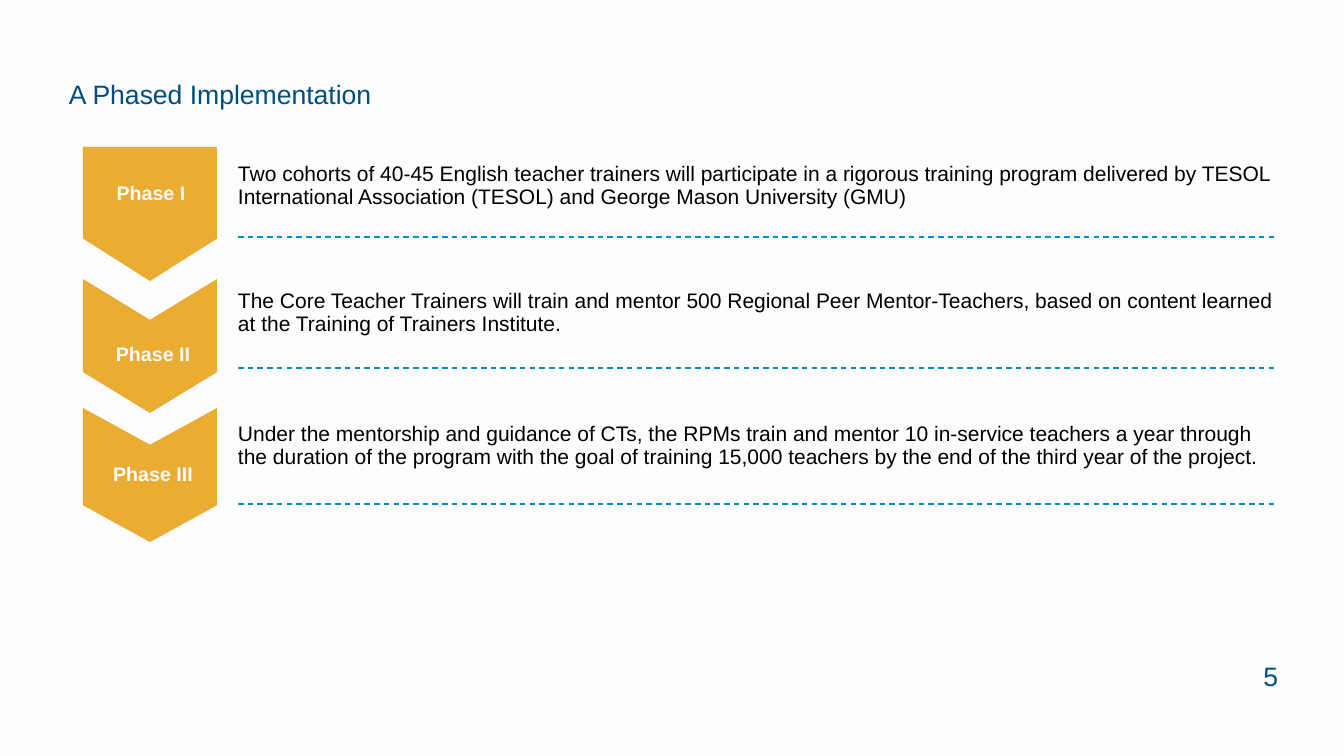
from dataclasses import dataclass

from lxml import etree
from pptx import Presentation
from pptx.dml.color import RGBColor
from pptx.enum.dml import MSO_LINE
from pptx.enum.shapes import MSO_CONNECTOR, MSO_SHAPE
from pptx.enum.text import MSO_ANCHOR, PP_ALIGN
from pptx.oxml.ns import qn
from pptx.util import Pt

PENTAGON, CHEVRON = MSO_SHAPE.PENTAGON, MSO_SHAPE.CHEVRON
STRAIGHT, DASH = MSO_CONNECTOR.STRAIGHT, MSO_LINE.DASH
LEFT, CENTER, RIGHT = PP_ALIGN.LEFT, PP_ALIGN.CENTER, PP_ALIGN.RIGHT
MIDDLE = MSO_ANCHOR.MIDDLE

# Content
TITLE = "A Phased Implementation"
PAGE_NUMBER = "5"
PHASES = [
    dict(name="Phase I",
         text="Two cohorts of 40-45 English teacher trainers will participate in a rigorous "
              "training program delivered by TESOL International Association (TESOL) and "
              "George Mason University (GMU)",
         arrow=PENTAGON, point=0.316, arrow_top=147, label=(84, 138, 134, 113),
         text_top=147, text_height=85, rule=237),
    dict(name="Phase II",
         text="The Core Teacher Trainers will train and mentor 500 Regional Peer "
              "Mentor-Teachers, based on content learned at the Training of Trainers Institute.",
         arrow=CHEVRON, point=0.305, arrow_top=279, label=(111, 329, 84, 52),
         text_top=273, text_height=88, rule=368),
    dict(name="Phase III",
         text="Under the mentorship and guidance of CTs, the RPMs train and mentor 10 "
              "in-service teachers a year through the duration of the program with the goal "
              "of training 15,000 teachers by the end of the third year of the project.",
         arrow=CHEVRON, point=0.274, arrow_top=408, label=(111, 445, 84, 60),
         text_top=407, text_height=86, rule=504),
]

# Layout in px
SLIDE_WIDTH, SLIDE_HEIGHT = 1344, 756
ARROW_LEFT, ARROW_SIZE = 83, 134
TEXT_LEFT, TEXT_WIDTH, TEXT_BOTTOM_INSET = 238, 1039, 7
RULE_RIGHT = 1278


@dataclass(frozen=True)
class Theme:
    font: str = "Arial"
    background: str = "FDFCFF"
    heading: str = "004E7D"
    arrow: str = "EAAC33"
    label: str = "FDFCFF"
    body: str = "000000"
    rule: str = "0090C3"
    heading_size: int = 19
    label_size: int = 14
    body_size: int = 15
    rule_width: int = 1


THEME = Theme()


def px(length):
    return round(length * 914400 / 100.8)


def add_text(slide, box, text, size, color, align=LEFT, bold=False, spacing=1.0, bottom=0):
    shape = slide.shapes.add_textbox(*map(px, box))
    frame = shape.text_frame
    frame.word_wrap = True
    frame.vertical_anchor = MIDDLE
    frame.margin_left = frame.margin_top = frame.margin_right = 0
    frame.margin_bottom = px(bottom)
    paragraph = frame.paragraphs[0]
    paragraph.alignment = align
    paragraph.line_spacing = spacing
    run = paragraph.add_run()
    run.text = text
    run.font.name = THEME.font
    run.font.size = Pt(size)
    run.font.bold = bold
    run.font.color.rgb = RGBColor.from_string(color)


def add_arrow(slide, kind, top, point):
    shape = slide.shapes.add_shape(kind, px(ARROW_LEFT), px(top), px(ARROW_SIZE), px(ARROW_SIZE))
    shape.rotation = 90
    shape.adjustments[0] = point
    shape.shadow.inherit = False
    shape.fill.solid()
    shape.fill.fore_color.rgb = RGBColor.from_string(THEME.arrow)
    shape.line.fill.background()


def add_rule(slide, y):
    rule = slide.shapes.add_connector(STRAIGHT, px(TEXT_LEFT), px(y), px(RULE_RIGHT), px(y))
    rule.line.color.rgb = RGBColor.from_string(THEME.rule)
    rule.line.width = Pt(THEME.rule_width)
    rule.line.dash_style = DASH
    etree.SubElement(rule._element.spPr, qn("a:effectLst"))


def main():
    presentation = Presentation()
    presentation.slide_width = px(SLIDE_WIDTH)
    presentation.slide_height = px(SLIDE_HEIGHT)
    slide = presentation.slides.add_slide(presentation.slide_layouts[6])
    slide.background.fill.solid()
    slide.background.fill.fore_color.rgb = RGBColor.from_string(THEME.background)

    # Title and page number
    add_text(slide, (69, 77, 1210, 33), TITLE, THEME.heading_size, THEME.heading)
    add_text(slide, (1234, 654, 44, 43), PAGE_NUMBER, THEME.heading_size, THEME.heading, RIGHT)

    # Phases: arrow, label, description and dashed rule
    for phase in PHASES:
        add_arrow(slide, phase["arrow"], phase["arrow_top"], phase["point"])
        add_text(slide, phase["label"], phase["name"], THEME.label_size, THEME.label,
                 CENTER, bold=True, spacing=0.9)
        text_box = (TEXT_LEFT, phase["text_top"], TEXT_WIDTH, phase["text_height"])
        add_text(slide, text_box, phase["text"], THEME.body_size, THEME.body,
                 spacing=0.9, bottom=TEXT_BOTTOM_INSET)
        add_rule(slide, phase["rule"])

    presentation.save("out.pptx")


if __name__ == "__main__":
    main()
